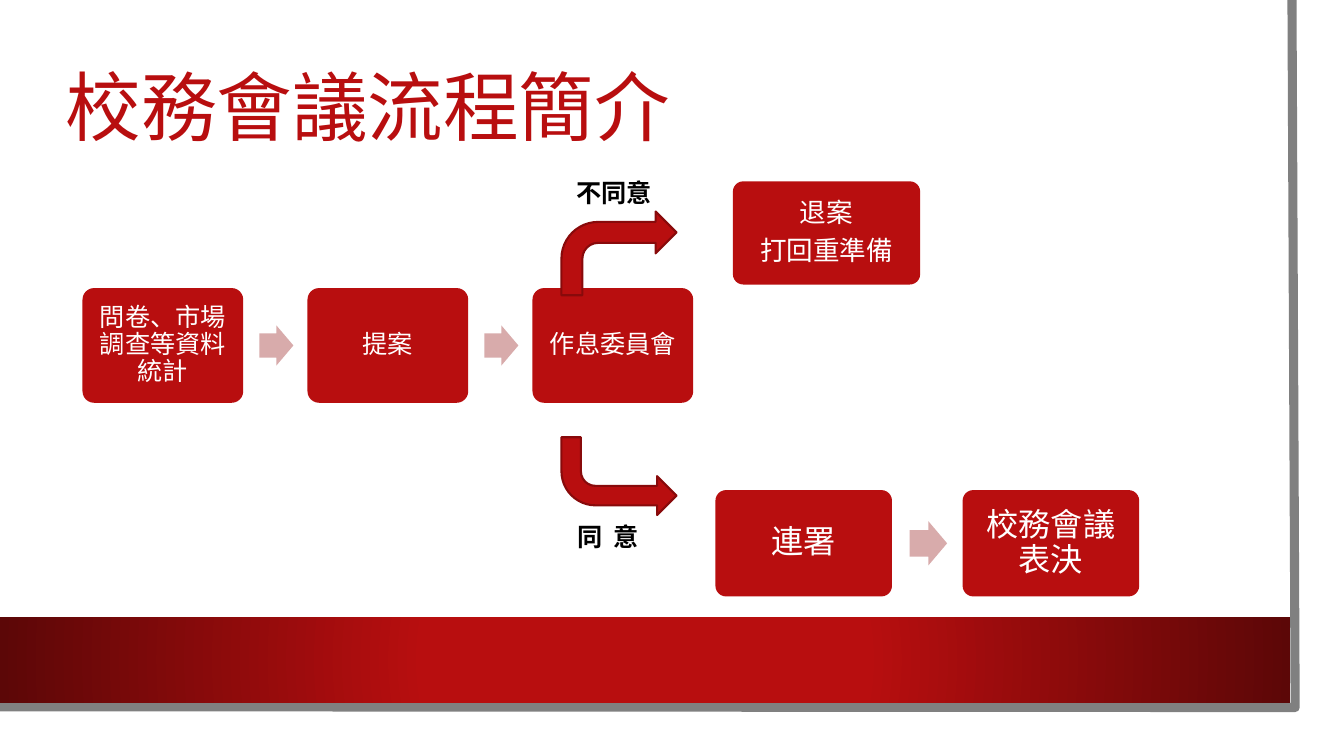
import pptx
import pptx.dml.color
import pptx.enum.shapes
import pptx.enum.text
import pptx.oxml.ns
import pptx.util
import lxml.etree
from dataclasses import dataclass

Cm = pptx.util.Cm
Pt = pptx.util.Pt
KIND = pptx.enum.shapes.MSO_SHAPE
ALIGN = pptx.enum.text.PP_ALIGN
MID = pptx.enum.text.MSO_ANCHOR.MIDDLE
TOP = pptx.enum.text.MSO_ANCHOR.TOP


@dataclass(frozen=True)
class Theme:
    red: str = "B80E0F"
    dark: str = "5C0707"
    rim: str = "880A0B"
    pale: str = "D8ABAB"
    gray: str = "808080"
    white: str = "FFFFFF"
    black: str = "000000"
    head: str = "Noto Sans CJK SC"
    body: str = "Arial Narrow"
    title: int = 54
    label: int = 18


theme = Theme()

TITLE = ("校務會議流程簡介", (1.4, 1.19, 28.88, 3.2))
ROWS = [
    dict(steps=["問卷、市場調查等資料統計", "提案", "作息委員會"],
         left=2.08, top=7.26, wide=4.05, high=2.89, size=18, inset=0.25),
    dict(steps=["連署", "校務會議表決"],
         left=18.03, top=12.35, wide=4.45, high=2.68, size=23, inset=0.34),
    dict(steps=["退案\n打回重準備"],
         left=18.47, top=4.57, wide=4.72, high=2.6, size=19, inset=0.28),
]
BENDS = [((14.15, 5.33, 2.9, 2.11), False), ((14.15, 11.02, 2.9, 1.96), True)]
LABELS = [("不同意", (14.27, 4.34, 3.07, 1.02), 0),
          ("同 意", (14.3, 13, 3.07, 1.02), 200)]
PANEL = (0, 0, 33.27, 18.47)
EDGE = [(32.56, 0), (32.64, 17.83), (-0.08, 17.81)]
BAND = (0, 15.55, 32.51, 2.16)

deck = pptx.Presentation()
deck.slide_width, deck.slide_height = Cm(33.87), Cm(19.05)
slide = deck.slides.add_slide(deck.slide_layouts[6])
shapes = slide.shapes


def rgb(code):
    return pptx.dml.color.RGBColor.from_string(code)


def add(kind, box, fill=None, line=None, width=1.5, adjust=()):
    shape = shapes.add_shape(kind, *map(Cm, box))
    shape.shadow.inherit = False
    if fill:
        shape.fill.solid()
        shape.fill.fore_color.rgb = rgb(fill)
    if line:
        shape.line.color.rgb = rgb(line)
        shape.line.width = Pt(width)
    else:
        shape.line.fill.background()
    for spot, value in enumerate(adjust):
        shape.adjustments[spot] = value
    return shape


def write(shape, text, size, color, font, align=ALIGN.LEFT, anchor=TOP,
          bold=False, inset=None, pitch=None, after=0, track=0):
    frame = shape.text_frame
    frame.word_wrap = True
    frame.vertical_anchor = anchor
    if inset is not None:
        frame.margin_left = frame.margin_right = Cm(inset)
        frame.margin_top = frame.margin_bottom = Cm(inset)
    for spot, words in enumerate(text.split("\n")):
        para = frame.add_paragraph() if spot else frame.paragraphs[0]
        para.alignment = align
        para.line_spacing = pitch
        para.space_after = Pt(after)
        run = para.add_run()
        run.text = words
        run.font.size = Pt(size)
        run.font.bold = bold
        run.font.color.rgb = rgb(color)
        run.font.name = font
        props = run.font._element
        east = lxml.etree.SubElement(props, pptx.oxml.ns.qn("a:ea"))
        east.set("typeface", font)
        if track:
            props.set("spc", str(track))


def frame():
    add(KIND.RECTANGLE, PANEL, theme.white)
    points = [(Cm(x), Cm(y)) for x, y in EDGE]
    pen = shapes.build_freeform(*points[0])
    pen.add_line_segments(points[1:], close=False)
    edge = pen.convert_to_shape()
    edge.shadow.inherit = False
    edge.fill.background()
    edge.line.color.rgb = rgb(theme.gray)
    edge.line.width = Pt(6.5)

    band = add(KIND.RECTANGLE, BAND)
    band.fill.gradient()
    stops = zip(band.fill.gradient_stops, (0.34, 1), (theme.red, theme.dark))
    for stop, place, color in stops:
        stop.position = place
        stop.color.rgb = rgb(color)
    lin = next(band.element.iter(pptx.oxml.ns.qn("a:lin")))
    grad = lin.getparent()
    grad.remove(lin)
    round_fill = lxml.etree.SubElement(grad, pptx.oxml.ns.qn("a:path"), path="circle")
    lxml.etree.SubElement(round_fill, pptx.oxml.ns.qn("a:fillToRect"),
                          dict.fromkeys("ltrb", "50000"))


def flow(steps, left, top, wide, high, size, inset):
    for spot, words in enumerate(steps):
        x = left + spot * 1.4 * wide
        node = add(KIND.ROUNDED_RECTANGLE, (x, top, wide, high),
                   theme.red, adjust=[0.1])
        write(node, words, size, theme.white, theme.body, align=ALIGN.CENTER,
              anchor=MID, inset=inset, pitch=0.9, after=0.35 * size)
        if spot < len(steps) - 1:
            tall = 0.25 * wide
            add(KIND.RIGHT_ARROW,
                (x + 1.1 * wide, top + (high - tall) / 2, 0.212 * wide, tall),
                theme.pale, adjust=[0.6, 0.5])


def main():
    frame()
    words, box = TITLE
    write(shapes.add_textbox(*map(Cm, box)), words, theme.title, theme.red,
          theme.head, anchor=MID, pitch=0.9)
    for row in ROWS:
        flow(**row)
    for box, flip in BENDS:
        bend = add(KIND.BENT_ARROW, box, theme.red, theme.rim)
        if flip:
            bend.element.spPr.xfrm.set("flipV", "1")
    for words, box, track in LABELS:
        write(shapes.add_textbox(*map(Cm, box)), words, theme.label,
              theme.black, theme.head, bold=True, track=track)
    deck.save("out.pptx")


if __name__ == "__main__":
    main()
